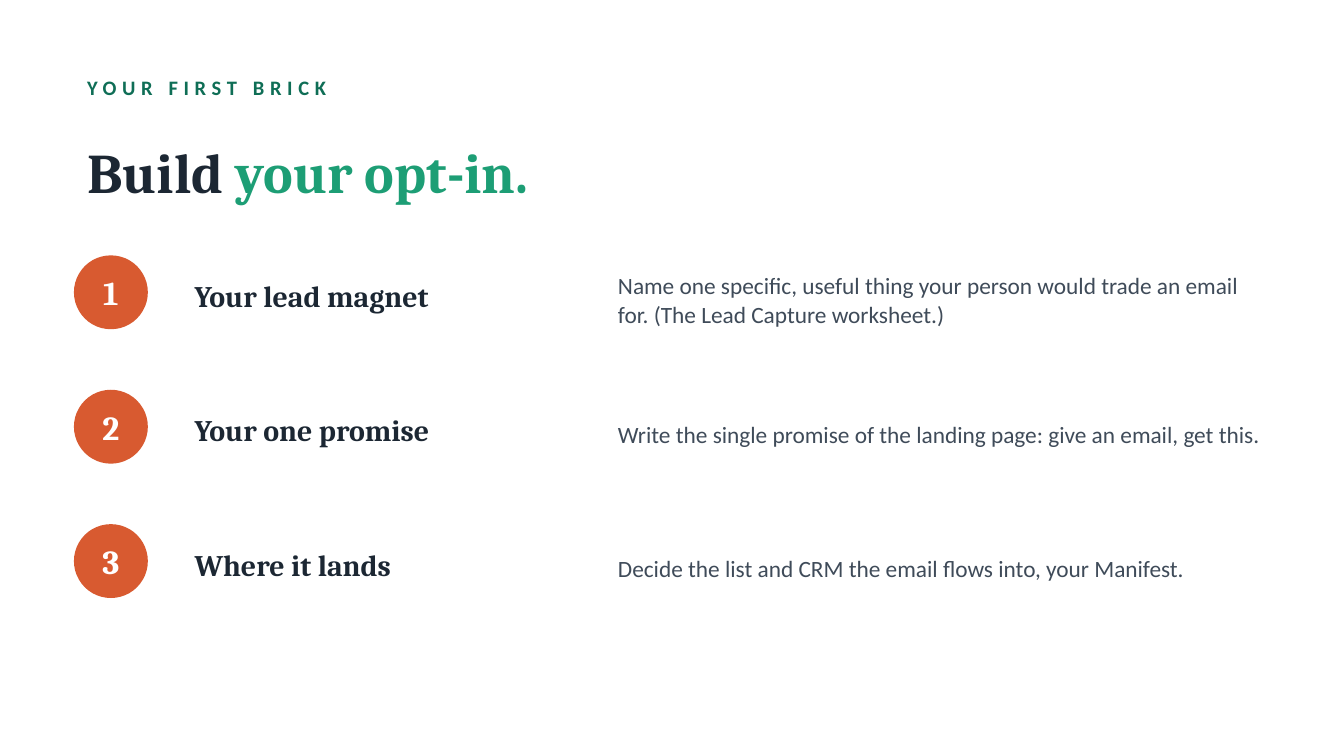
from dataclasses import dataclass

from pptx import Presentation
from pptx.dml.color import RGBColor
from pptx.enum import shapes, text
from pptx.util import Pt


@dataclass(frozen=True)
class Theme:
    heading_font: str = "Cambria"
    body_font: str = "Calibri"
    ink: str = "1C2733"
    body: str = "3F4B59"
    deep_green: str = "0F6E56"
    green: str = "1D9E75"
    orange: str = "D85A30"
    white: str = "FFFFFF"
    eyebrow_size: float = 11
    title_size: float = 30
    number_size: float = 18
    step_size: float = 16
    detail_size: float = 12.5


theme = Theme()
LEFT = 39.6
ROW_TOP = 136.8
ROW_PITCH = 72
CIRCLE = 39.6

steps = [
    ("Your lead magnet",
     "Name one specific, useful thing your person would trade an email for. "
     "(The Lead Capture worksheet.)"),
    ("Your one promise",
     "Write the single promise of the landing page: give an email, get this."),
    ("Where it lands",
     "Decide the list and CRM the email flows into, your Manifest."),
]


def write(shape, words, font, size, color, bold=True, align=text.PP_ALIGN.LEFT):
    """Put one styled, vertically centred paragraph in the shape and return it."""
    frame = shape.text_frame
    frame.word_wrap = True
    frame.auto_size = text.MSO_AUTO_SIZE.NONE
    frame.vertical_anchor = text.MSO_ANCHOR.MIDDLE
    paragraph = frame.paragraphs[0]
    paragraph.add_run().text = words
    paragraph.alignment = align
    paragraph.font.name = font
    paragraph.font.size = Pt(size)
    paragraph.font.bold = bold
    paragraph.font.color.rgb = RGBColor.from_string(color)
    return paragraph


presentation = Presentation()
presentation.slide_width, presentation.slide_height = Pt(720), Pt(405)
slide = presentation.slides.add_slide(presentation.slide_layouts[5])
slide.background.fill.solid()
slide.background.fill.fore_color.rgb = RGBColor.from_string(theme.white)

# Heading
eyebrow = slide.shapes.add_textbox(Pt(LEFT), Pt(36), Pt(640.8), Pt(21.6))
paragraph = write(eyebrow, "YOUR FIRST BRICK", theme.body_font,
                  theme.eyebrow_size, theme.deep_green)
paragraph.runs[0].font._element.set("spc", "300")

title = slide.shapes.title
title.left, title.top, title.width, title.height = Pt(LEFT), Pt(61.2), Pt(640.8), Pt(61.2)
paragraph = write(title, "Build ", theme.heading_font, theme.title_size, theme.ink)
accent = paragraph.add_run()
accent.text = "your opt-in."
accent.font.color.rgb = RGBColor.from_string(theme.green)

# Numbered steps
for index, (name, detail) in enumerate(steps):
    top = ROW_TOP + index * ROW_PITCH

    circle = slide.shapes.add_shape(shapes.MSO_SHAPE.OVAL, Pt(LEFT), Pt(top),
                                    Pt(CIRCLE), Pt(CIRCLE))
    circle.shadow.inherit = False
    circle.fill.solid()
    circle.fill.fore_color.rgb = RGBColor.from_string(theme.orange)
    circle.line.fill.background()
    frame = circle.text_frame
    frame.margin_left = frame.margin_right = frame.margin_top = frame.margin_bottom = 0
    write(circle, str(index + 1), theme.heading_font, theme.number_size,
          theme.white, align=text.PP_ALIGN.CENTER)

    name_box = slide.shapes.add_textbox(Pt(97.2), Pt(top - 3.6), Pt(216), Pt(50.4))
    write(name_box, name, theme.heading_font, theme.step_size, theme.ink)

    detail_box = slide.shapes.add_textbox(Pt(324), Pt(top - 3.6), Pt(360), Pt(54))
    paragraph = write(detail_box, detail, theme.body_font, theme.detail_size,
                      theme.body, bold=False)
    paragraph.line_spacing = 1.05

presentation.save("out.pptx")
